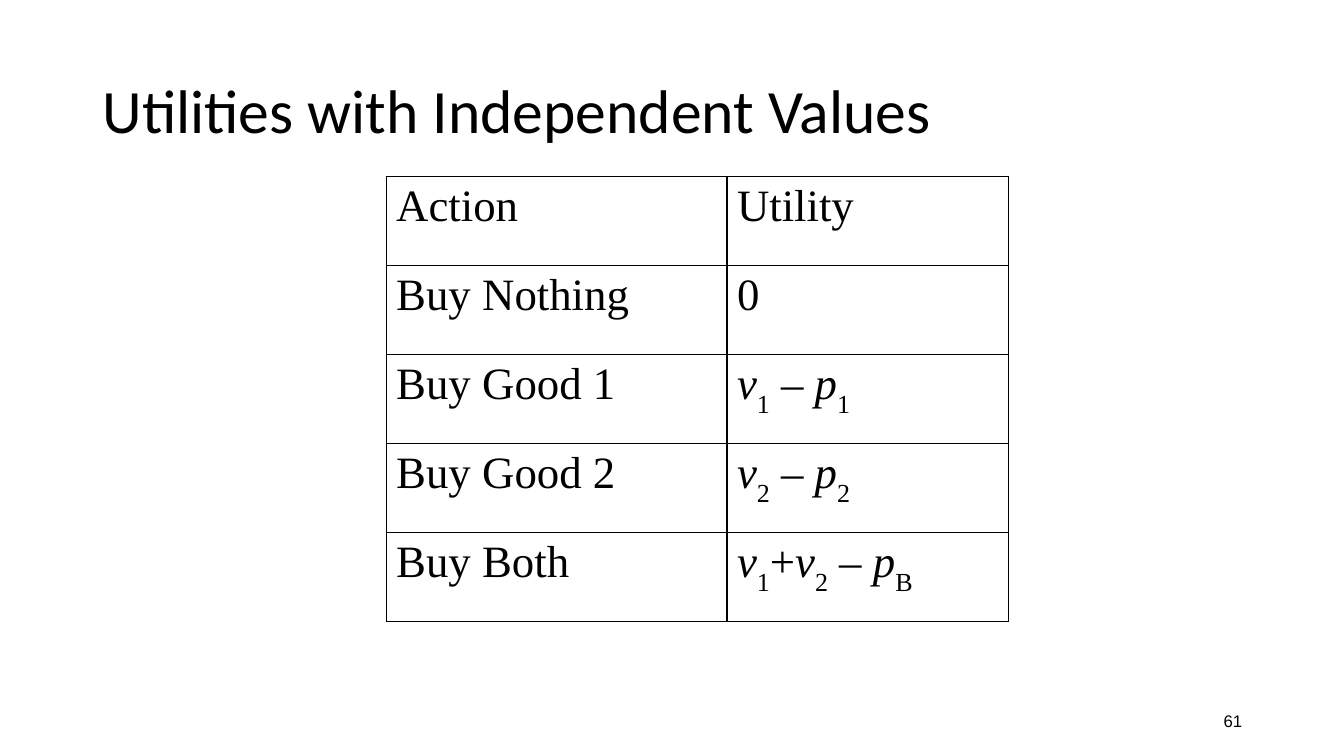
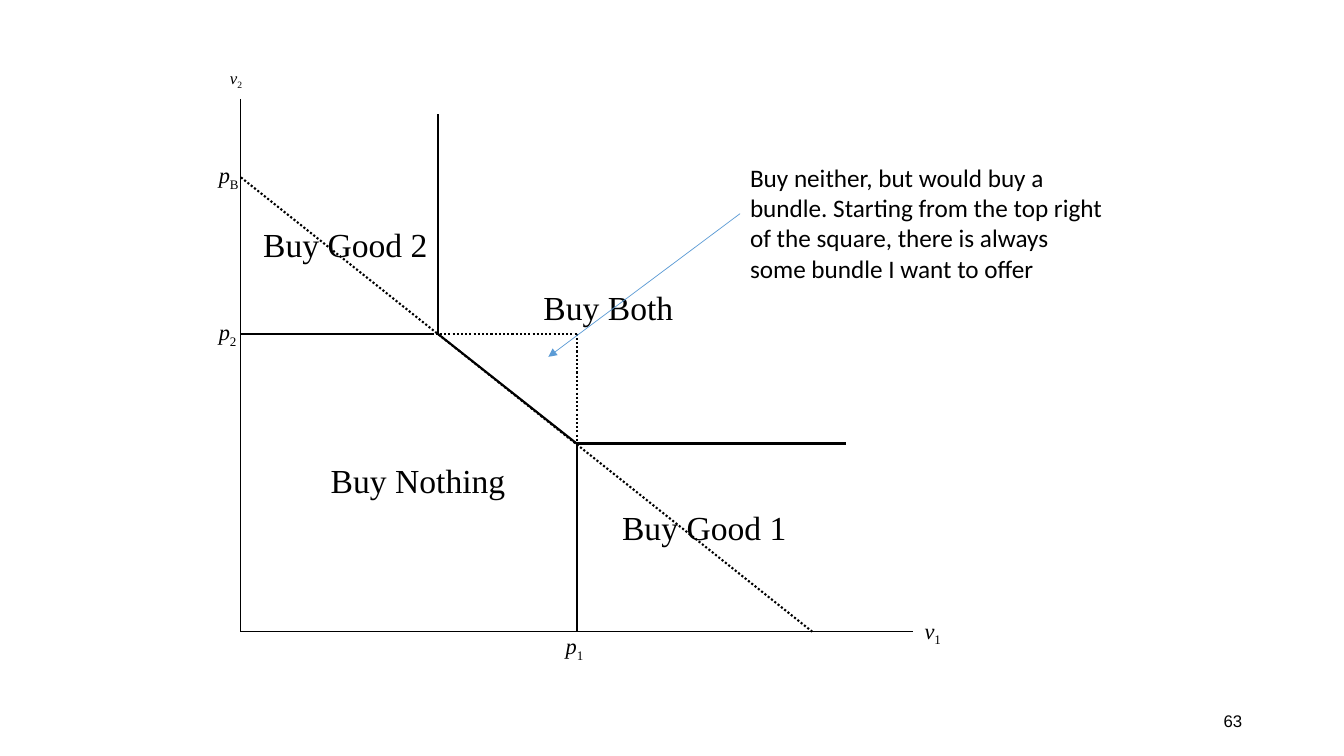
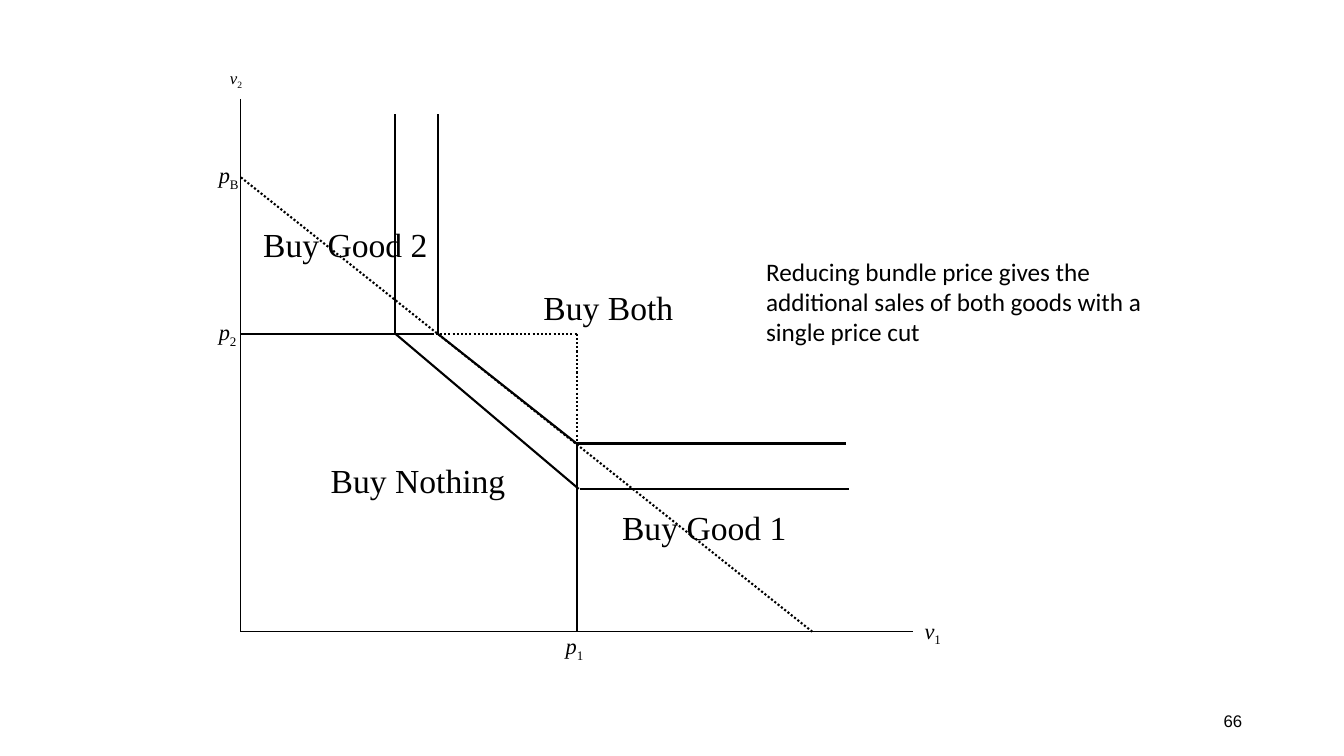
from lxml import etree
from pptx import Presentation
from pptx import util as u
from pptx.dml.color import RGBColor
from pptx.enum import dml, text
from pptx.enum.shapes import MSO_CONNECTOR
from pptx.oxml import ns

BLACK = "000000"
BLUE = "5B9BD5"
SERIF = "Times New Roman"
SANS = "Calibri"

LEFT, BASE = 239, 627
BEND, EDGE = 434, 572
HIGH, LOW = 331, 440
TOP = 113

ROWS = [
    ("Action", "Utility"),
    ("Buy Nothing", "0"),
    ("Buy Good 1", "v_1 – p_1"),
    ("Buy Good 2", "v_2 – p_2"),
    ("Buy Both", "v_1+v_2 – p_B"),
]
AXES = [(LEFT, 98, LEFT, BASE), (LEFT, BASE, 906, BASE)]
SOLID = [
    (BEND, HIGH, BEND, TOP),
    (BEND, HIGH, EDGE, LOW),
    (LEFT, HIGH, 428, HIGH),
    (EDGE, LOW, EDGE, BASE),
    (EDGE, LOW, 839, LOW),
]
DOTS = [
    (LEFT, 176, 806, BASE),
    (428, HIGH, EDGE, HIGH),
    (EDGE, HIGH, EDGE, LOW),
]
CUT = [
    (392, HIGH, 574, 485),
    (392, HIGH, 392, TOP),
    (575, 485, 842, 485),
]
MARKS = [
    ("p_B", 217, 160, 16),
    ("p_2", 217, 316, 16),
    ("p_1", 561, 627, 16),
    ("v_1", 917, 612, 16),
    ("v_2", 228, 67, 12),
]
ZONES = [
    ("Buy Both", 539, 285),
    ("Buy Good 1", 617, 503),
    ("Buy Good 2", 261, 222),
    ("Buy Nothing", 328, 456),
]


def px(n):
    return u.Emu(n * 9144)


def color(code):
    return RGBColor.from_string(code)


def add_run(para, words, slant=False, drop=0):
    if not words:
        return
    run = para.add_run()
    run.text = words
    if slant:
        run.font.italic = True
    if drop:
        run.font._element.set("baseline", str(-drop * 1000))


def write(frame, words, size, face, drop=25):
    para = frame.paragraphs[0]
    font = para.font
    font.size, font.name = u.Pt(size), face
    font.color.rgb = color(BLACK)
    parts = words.split("_")
    for i, part in enumerate(parts):
        if i:
            add_run(para, part[0], drop=drop)
            part = part[1:]
        if i < len(parts) - 1:
            add_run(para, part[:-1])
            add_run(para, part[-1], slant=True)
        else:
            add_run(para, part)
    return para


def add_text(slide, words, box, size, face, inset=True, middle=False):
    frame = slide.shapes.add_textbox(*map(px, box)).text_frame
    frame.word_wrap = True
    if not inset:
        frame.margin_left = frame.margin_right = 0
        frame.margin_top = frame.margin_bottom = 0
    if middle:
        frame.vertical_anchor = text.MSO_ANCHOR.MIDDLE
    return write(frame, words, size, face)


def add_line(slide, ends, width=1.5, tint=BLACK, dots=False, arrow=False):
    line = slide.shapes.add_connector(MSO_CONNECTOR.STRAIGHT, *map(px, ends))
    line.line.color.rgb = color(tint)
    line.line.width = u.Pt(width)
    if dots:
        line.line.dash_style = dml.MSO_LINE.ROUND_DOT
    if arrow:
        tail = etree.SubElement(line.line._get_or_add_ln(), ns.qn("a:tailEnd"))
        tail.set("type", "triangle")
    etree.SubElement(line._element.spPr, ns.qn("a:effectLst"))


def add_edges(cell):
    props = cell._tc.get_or_add_tcPr()
    for side in ("lnL", "lnR", "lnT", "lnB"):
        edge = etree.SubElement(props, ns.qn("a:" + side), w=str(u.Pt(1)))
        fill = etree.SubElement(edge, ns.qn("a:solidFill"))
        etree.SubElement(fill, ns.qn("a:srgbClr"), val=BLACK)


def add_grid(slide, rows, box, widths):
    shape = slide.shapes.add_table(len(rows), len(widths), *map(px, box))
    table = shape.table
    table.first_row = table.horz_banding = False
    for col, width in zip(table.columns, widths):
        col.width = px(width)
    for r, row in enumerate(rows):
        for c, words in enumerate(row):
            cell = table.cell(r, c)
            write(cell.text_frame, words, 32, SERIF, drop=30)
            add_edges(cell)
            cell.fill.background()


def add_page(deck, number):
    slide = deck.slides.add_slide(deck.slide_layouts[6])
    para = add_text(slide, number, (942, 695, 300, 40), 12, "Arial", middle=True)
    para.alignment = text.PP_ALIGN.RIGHT
    return slide


def add_title(slide, words):
    para = add_text(slide, words, (92, 40, 1150, 145), 44, SANS, middle=True)
    para.line_spacing = 0.9


def add_graph(slide):
    for ends in AXES:
        add_line(slide, ends, 0.75)
    for ends in SOLID:
        add_line(slide, ends)
    for ends in DOTS:
        add_line(slide, ends, dots=True)
    for words, x, y, size in MARKS:
        add_text(slide, words, (x, y, 44, 31), size, SERIF, inset=False)
    for words, x, y in ZONES:
        add_text(slide, words, (x, y, 178, 62), 24, SERIF, inset=False)


def main():
    deck = Presentation()
    deck.slide_width, deck.slide_height = px(1333), px(750)

    slide = add_page(deck, "61")
    add_title(slide, "Utilities with Independent Values")
    add_grid(slide, ROWS, (383, 175, 617, 442), (338, 279))

    slide = add_page(deck, "63")
    add_graph(slide)
    add_line(slide, (734, 212, 544, 354), 0.5, BLUE, arrow=True)
    note = (
        "Buy neither, but would buy a bundle. Starting from the top right "
        "of the square, there is always some bundle I want to offer"
    )
    add_text(slide, note, (734, 156, 371, 131), 18, SANS)

    slide = add_page(deck, "66")
    add_graph(slide)
    for ends in CUT:
        add_line(slide, ends)
    note = (
        "Reducing bundle price gives the additional sales of both goods "
        "with a single price cut"
    )
    add_text(slide, note, (750, 249, 414, 101), 18, SANS)

    deck.save("out.pptx")


if __name__ == "__main__":
    main()
